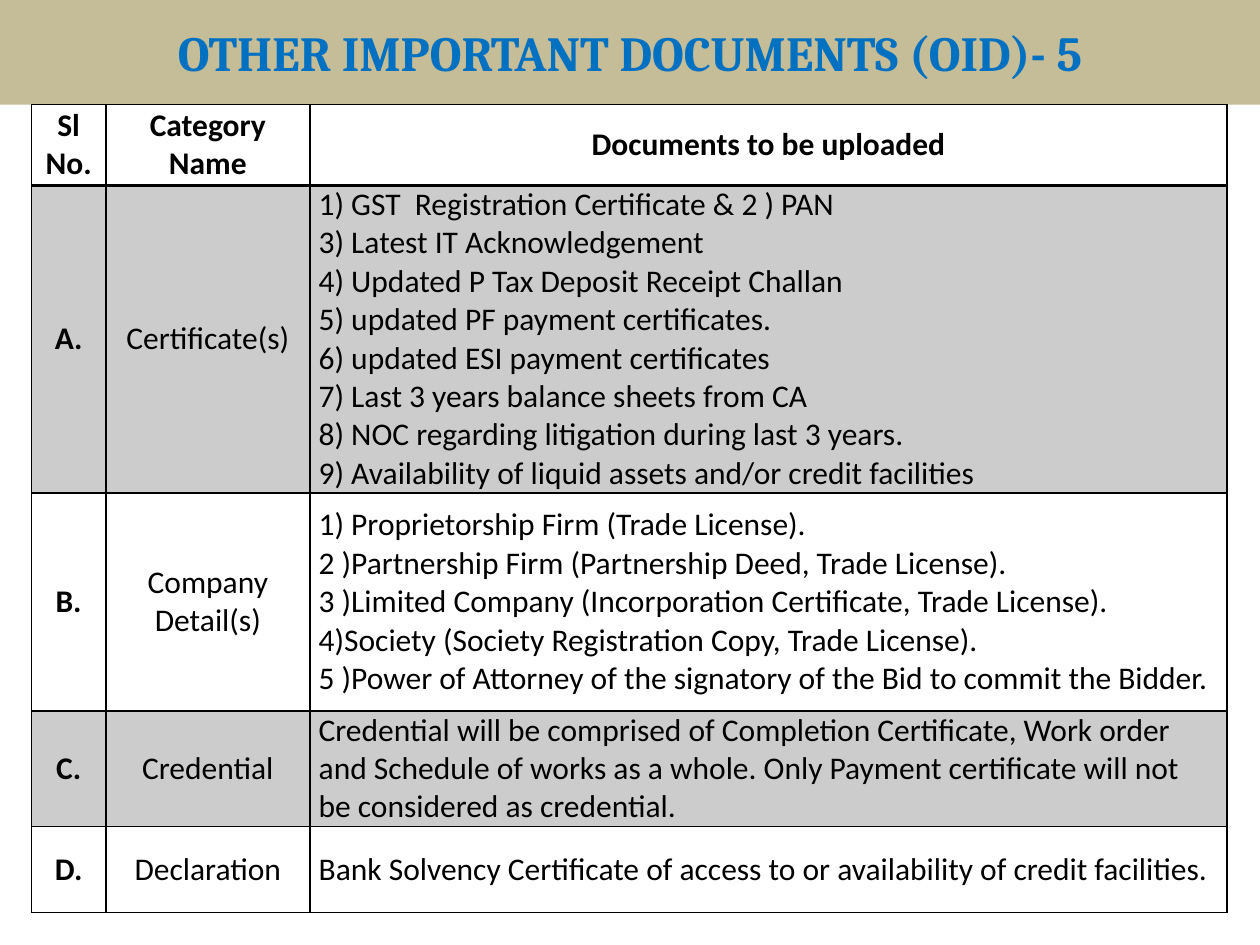
"""Build the slide listing other important documents to be uploaded."""
from dataclasses import dataclass

from lxml.etree import SubElement
from pptx import Presentation
from pptx.dml.color import RGBColor
from pptx.enum.text import MSO_ANCHOR, PP_ALIGN
from pptx.oxml.ns import qn
from pptx.table import _Cell
from pptx.text.text import _Paragraph
from pptx.util import Inches, Pt

COLORS = {"band": "C4BD97", "title": "0070C0", "ink": "000000"}
COL_WIDTHS = (0.59, 1.62, 7.28)
HEADER_HEIGHT = 0.64
HEADERS = ("Sl No.", "Category Name", "Documents to be uploaded")


@dataclass
class Category:
    mark: str
    name: str
    docs: tuple[str, ...]
    height: float
    shaded: bool = False
    hanging: float = 0


CATEGORIES = (
    Category("A.", "Certificate(s)", (
        "1) GST  Registration Certificate & 2 ) PAN",
        "3) Latest IT Acknowledgement",
        "4) Updated P Tax Deposit Receipt Challan",
        "5) updated PF payment certificates.",
        "6) updated ESI payment certificates",
        "7) Last 3 years balance sheets from CA",
        "8) NOC regarding litigation during last 3 years.",
        "9) Availability of liquid assets and/or credit facilities",
    ), 2.44, shaded=True, hanging=0.39),
    Category("B.", "Company Detail(s)", (
        "1) Proprietorship Firm (Trade License).",
        "2 )Partnership Firm (Partnership Deed, Trade License).",
        "3 )Limited Company (Incorporation Certificate, Trade License).",
        "4)Society (Society Registration Copy, Trade License).",
        "5 )Power of Attorney of the signatory of the Bid to commit the Bidder.",
    ), 1.73),
    Category("C.", "Credential", (
        "Credential will be comprised of Completion Certificate, Work order and "
        "Schedule of works as a whole. Only Payment certificate will not be "
        "considered as credential.",
    ), 0.92, shaded=True),
    Category("D.", "Declaration", (
        "Bank Solvency Certificate of access to or availability of credit facilities.",
    ), 0.68),
)


def rgb(name: str) -> RGBColor:
    return RGBColor.from_string(COLORS[name])


def add_run(p: _Paragraph, text: str, font: str, size: float, color: str, bold: bool) -> None:
    r = p.add_run()
    r.text = text
    r.font.name = font
    r.font.size = Pt(size)
    r.font.bold = bold
    r.font.color.rgb = rgb(color)


def set_borders(cell: _Cell, top: float, bottom: float) -> None:
    tc_pr = cell._tc.get_or_add_tcPr()
    for side, width in (("L", 1), ("R", 1), ("T", top), ("B", bottom)):
        ln = SubElement(tc_pr, qn(f"a:ln{side}"), w=str(Pt(width)))
        fill = SubElement(ln, qn("a:solidFill"))
        SubElement(fill, qn("a:srgbClr"), val=COLORS["ink"])


def set_fill(cell: _Cell, shaded: bool) -> None:
    if not shaded:
        cell.fill.background()
        return
    cell.fill.solid()
    cell.fill.fore_color.rgb = rgb("ink")
    color = cell._tc.tcPr.find(f"{qn('a:solidFill')}/{qn('a:srgbClr')}")
    SubElement(color, qn("a:alpha"), val="20000")


def fill_cell(cell: _Cell, lines: tuple[str, ...], bold: bool, centred: bool,
              hanging: float = 0) -> None:
    cell.vertical_anchor = MSO_ANCHOR.MIDDLE
    cell.margin_left = cell.margin_right = Inches(0.07)
    cell.margin_top = cell.margin_bottom = 0
    tf = cell.text_frame
    for i, line in enumerate(lines):
        p = tf.add_paragraph() if i else tf.paragraphs[0]
        p.alignment = PP_ALIGN.CENTER if centred else PP_ALIGN.LEFT
        if hanging:
            p_pr = p._p.get_or_add_pPr()
            p_pr.set("marL", str(Inches(hanging)))
            p_pr.set("indent", str(-Inches(hanging)))
        add_run(p, line, "Calibri", 18, "ink", bold)


def main() -> None:
    prs = Presentation()
    prs.slide_width, prs.slide_height = Inches(10), Inches(7.5)
    s = prs.slides.add_slide(prs.slide_layouts[5])

    title = s.shapes.title
    title.left, title.top = 0, 0
    title.width, title.height = Inches(10), Inches(0.83)
    title.fill.solid()
    title.fill.fore_color.rgb = rgb("band")
    tf = title.text_frame
    tf.vertical_anchor = MSO_ANCHOR.MIDDLE
    p = tf.paragraphs[0]
    p.alignment = PP_ALIGN.CENTER
    add_run(p, "OTHER IMPORTANT DOCUMENTS (OID)- 5", "Cambria", 28, "title", True)

    heights = (HEADER_HEIGHT, *(c.height for c in CATEGORIES))
    table = s.shapes.add_table(
        len(heights), len(COL_WIDTHS), Inches(0.25), Inches(0.83),
        Inches(sum(COL_WIDTHS)), Inches(sum(heights))).table
    table.horz_banding = False
    for col, width in zip(table.columns, COL_WIDTHS):
        col.width = Inches(width)
    for i, height in enumerate(heights):
        table.rows[i].height = Inches(height)
        for cell in table.rows[i].cells:
            set_borders(cell, top=2 if i == 1 else 1, bottom=2 if i == 0 else 1)
            set_fill(cell, i > 0 and CATEGORIES[i - 1].shaded)

    for j, header in enumerate(HEADERS):
        fill_cell(table.cell(0, j), (header,), bold=True, centred=True)
    for i, c in enumerate(CATEGORIES, start=1):
        fill_cell(table.cell(i, 0), (c.mark,), bold=True, centred=True)
        fill_cell(table.cell(i, 1), (c.name,), bold=False, centred=True, hanging=c.hanging)
        fill_cell(table.cell(i, 2), c.docs, bold=False, centred=False)

    prs.save("out.pptx")


if __name__ == "__main__":
    main()
